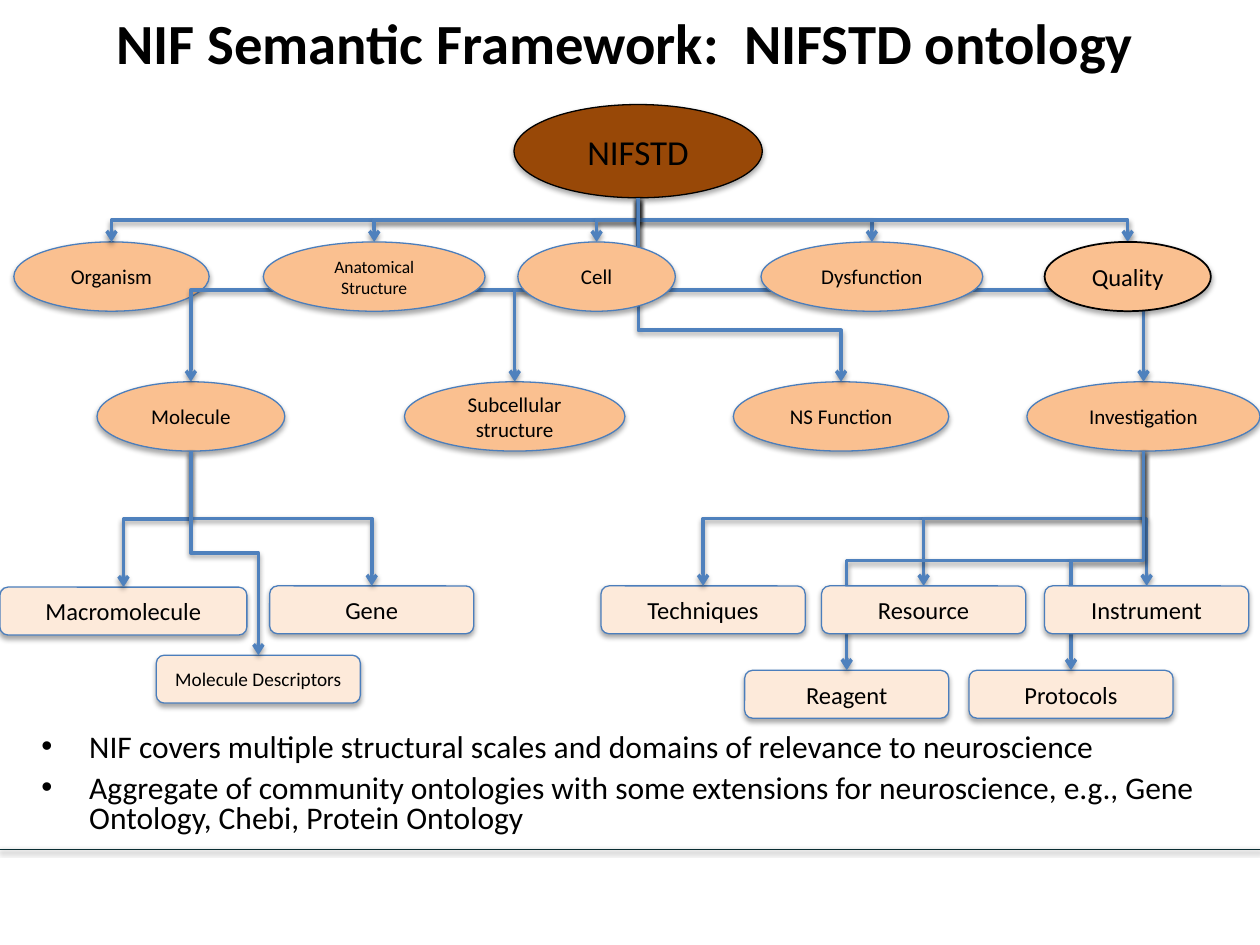
from lxml.etree import SubElement
from pptx import Presentation
from pptx.dml.color import RGBColor
from pptx.enum.shapes import MSO_CONNECTOR as LINK, MSO_SHAPE as SHAPE
from pptx.enum.text import MSO_ANCHOR as ANCHOR, PP_ALIGN as ALIGN
from pptx.oxml.ns import qn
from pptx.util import Inches, Pt

# Content
TITLE = "NIF Semantic Framework:  NIFSTD ontology"
BULLETS = [
    "NIF covers multiple structural scales and domains of relevance to neuroscience",
    "Aggregate of community ontologies with some extensions for neuroscience, "
    "e.g., Gene Ontology, Chebi, Protein Ontology",
]
# Tiers: top, height, shape, fill, text size, then (name, left, width)
OVAL, CARD = SHAPE.OVAL, SHAPE.ROUNDED_RECTANGLE
TIERS = [
    (0.83, 0.74, OVAL, "984807", 20, [("NIFSTD", 4.08, 1.97)]),
    (1.92, 0.55, OVAL, "FAC090", 12, [
        ("Organism", 0.11, 1.55), ("Anatomical Structure", 2.09, 1.76),
        ("Cell", 4.11, 1.25), ("Dysfunction", 6.04, 1.76), ("Quality", 8.29, 1.32)]),
    (3.03, 0.55, OVAL, "FAC090", 12, [
        ("Molecule", 0.77, 1.49), ("Subcellular structure", 3.21, 1.75),
        ("NS Function", 5.82, 1.71), ("Investigation", 8.15, 1.85)]),
    (4.66, 0.38, CARD, "FDEADA", 14, [("Macromolecule", 0, 1.96)]),
    (4.65, 0.38, CARD, "FDEADA", 14, [
        ("Gene", 2.14, 1.62), ("Techniques", 4.77, 1.62),
        ("Resource", 6.52, 1.62), ("Instrument", 8.29, 1.62)]),
    (5.2, 0.38, CARD, "FDEADA", 11, [("Molecule Descriptors", 1.24, 1.62)]),
    (5.32, 0.38, CARD, "FDEADA", 14, [
        ("Reagent", 5.91, 1.62), ("Protocols", 7.69, 1.62)]),
]
CHILDREN = {
    "NIFSTD": ["Organism", "Anatomical Structure", "Cell", "Dysfunction", "Quality",
               "Molecule", "Subcellular structure", "NS Function", "Investigation"],
    "Molecule": ["Macromolecule", "Gene", "Molecule Descriptors"],
    "Investigation": ["Techniques", "Resource", "Instrument", "Reagent", "Protocols"],
}
# Exceptions to the tier rules
TEXT_SIZES = {"Anatomical Structure": 10, "Quality": 14}
OUTLINES = {"NIFSTD": ("000000", 0.75), "Quality": ("000000", 1)}
BENDS = {"NS Function": 0.72}
IN_FRONT = {"Cell", "Resource", "Instrument", "Dysfunction", "Quality",
            "Anatomical Structure"}


def color(value):
    return RGBColor.from_string(value)


def write(para, text, size, bold=False, align=None):
    para.alignment = align
    span = para.add_run()
    span.text = text
    span.font.name = "Calibri"
    span.font.size = Pt(size)
    span.font.bold = bold
    span.font.color.rgb = color("000000")


def cast_shadow(effects, distance, opacity):
    shadow = SubElement(effects, qn("a:outerShdw"), blurRad=str(Pt(3.1)),
                        dist=str(Pt(distance)), dir="5400000", rotWithShape="0")
    black = SubElement(shadow, qn("a:srgbClr"), val="000000")
    SubElement(black, qn("a:alpha"), val=str(opacity * 1000))


def add_line(page, kind, ends, stroke, width):
    line = page.shapes.add_connector(kind, *map(Inches, ends))
    line.line.color.rgb = color(stroke)
    line.line.width = Pt(width)
    cast_shadow(SubElement(line._element.spPr, qn("a:effectLst")), 1.6, 38)
    return line


def add_node(page, name, left, top, width, height, kind, fill, size):
    node = page.shapes.add_shape(kind, *map(Inches, (left, top, width, height)))
    node.fill.solid()
    node.fill.fore_color.rgb = color(fill)
    stroke, weight = OUTLINES.get(name, ("4B7EBC", 0.75))
    node.line.color.rgb = color(stroke)
    node.line.width = Pt(weight)
    node.shadow.inherit = False
    cast_shadow(node._element.spPr.find(qn("a:effectLst")), 1.8, 35)
    frame = node.text_frame
    frame.word_wrap = True
    frame.vertical_anchor = ANCHOR.MIDDLE
    write(frame.paragraphs[0], name, TEXT_SIZES.get(name, size), align=ALIGN.CENTER)


def add_branch(page, x1, y1, x2, y2, bend):
    """Elbow arrow that leaves downwards, runs sideways and arrives downwards."""
    branch = add_line(page, LINK.ELBOW, (x1, y1, x2, y2), "4F81BD", 2)
    # A quarter turn swaps the width and height about the same centre
    drop, run = y2 - y1, abs(x2 - x1)
    branch.left = Inches((x1 + x2 - drop) / 2)
    branch.top = Inches((y1 + y2 - run) / 2)
    branch.width, branch.height = Inches(drop), Inches(run)
    props = branch._element.spPr
    frame = props.find(qn("a:xfrm"))
    frame.attrib.pop("flipH", None)
    frame.set("rot", "5400000" if x2 < x1 else "16200000")
    if x2 >= x1:
        frame.set("flipH", "1")
    guides = props.find(qn("a:prstGeom")).get_or_add_avLst()
    SubElement(guides, qn("a:gd"), name="adj1", fmla=f"val {round(bend * 100000)}")
    SubElement(props.find(qn("a:ln")), qn("a:tailEnd"), type="arrow")


def add_bullets(page):
    box = page.shapes.add_textbox(*map(Inches, (0.23, 5.78, 9.39, 1.47)))
    frame = box.text_frame
    frame.word_wrap = True
    for index, text in enumerate(BULLETS):
        para = frame.add_paragraph() if index else frame.paragraphs[0]
        props = para._p.get_or_add_pPr()
        props.set("marL", str(Inches(0.38)))
        props.set("indent", str(Inches(-0.38)))
        SubElement(props, qn("a:buFont"), typeface="Arial")
        SubElement(props, qn("a:buChar"), char="•")
        para.line_spacing = 0.8
        para.space_before = Pt(6 if index else 0)
        write(para, text, 18)


def main():
    deck = Presentation()
    deck.slide_width, deck.slide_height = Inches(10), Inches(7.5)
    page = deck.slides.add_slide(deck.slide_layouts[5])

    # Footer rule, title and bullets
    add_line(page, LINK.STRAIGHT, (0, 6.74, 10, 6.74), "092D33", 0.75)
    title = page.shapes.title
    title.left, title.top, title.width, title.height = map(Inches, (0.46, -0.29, 9, 1.25))
    title.text_frame.vertical_anchor = ANCHOR.MIDDLE
    write(title.text_frame.paragraphs[0], TITLE, 32.4, bold=True, align=ALIGN.CENTER)
    add_bullets(page)

    # Ontology tree: rear nodes, branches, then front nodes
    nodes = {name: (left, top, width, height, kind, fill, size)
             for top, height, kind, fill, size, items in TIERS
             for name, left, width in items}
    for name, node in nodes.items():
        if name not in IN_FRONT:
            add_node(page, name, *node)
    for parent, children in CHILDREN.items():
        left, top, width, height = nodes[parent][:4]
        for child in children:
            child_left, child_top, child_width = nodes[child][:3]
            add_branch(page, left + width / 2, top + height,
                       child_left + child_width / 2, child_top, BENDS.get(child, 0.5))
    for name, node in nodes.items():
        if name in IN_FRONT:
            add_node(page, name, *node)

    deck.save("out.pptx")


if __name__ == "__main__":
    main()
